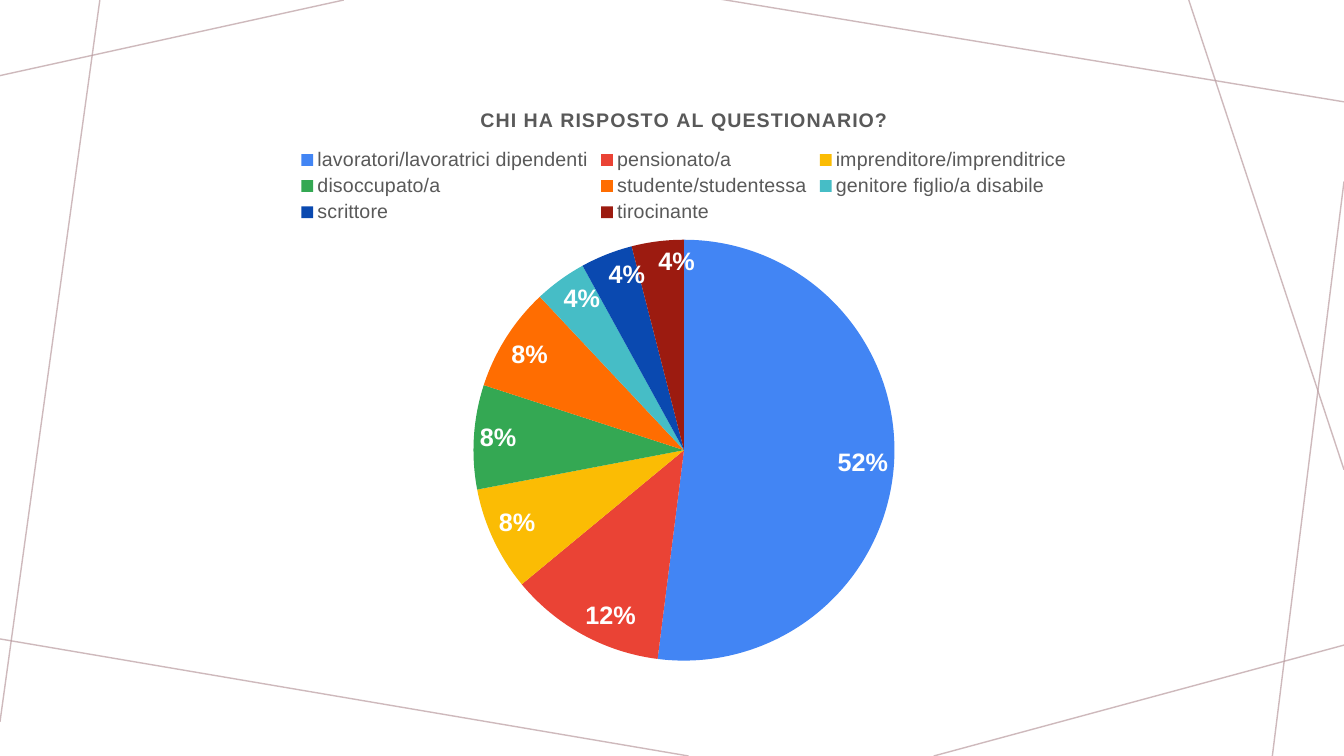
from lxml.etree import SubElement
from pptx import Presentation
from pptx.chart.data import CategoryChartData
from pptx.dml.color import RGBColor
from pptx.enum.chart import XL_CHART_TYPE, XL_LABEL_POSITION, XL_LEGEND_POSITION
from pptx.enum.shapes import MSO_CONNECTOR
from pptx.oxml.ns import qn
from pptx.util import Inches, Pt

WHITE = RGBColor(0xFF, 0xFF, 0xFF)
GREY = RGBColor(0x59, 0x59, 0x59)
MAUVE = RGBColor(0xBA, 0x9C, 0xA0)
BLUE = RGBColor(0x42, 0x85, 0xF4)
RED = RGBColor(0xEA, 0x43, 0x35)
YELLOW = RGBColor(0xFB, 0xBC, 0x04)
GREEN = RGBColor(0x34, 0xA8, 0x53)
ORANGE = RGBColor(0xFF, 0x6D, 0x01)
TEAL = RGBColor(0x46, 0xBD, 0xC6)
NAVY = RGBColor(0x0A, 0x49, 0xB0)
MAROON = RGBColor(0x9C, 0x1B, 0x10)

LINES = [
    (25.58, 0, 0, 10),
    (7.43, 0, 0, 95.47),
    (51.24, 100, -0.38, 84.4),
    (100, 85.33, 69.47, 100),
    (100, 24, 94.67, 100),
    (100, 62.13, 88.45, 0),
    (100, 13.47, 53.56, -0.13),
]

GROUPS = [
    ("lavoratori/lavoratrici dipendenti", 52, BLUE),
    ("pensionato/a", 12, RED),
    ("imprenditore/imprenditrice", 8, YELLOW),
    ("disoccupato/a", 8, GREEN),
    ("studente/studentessa", 8, ORANGE),
    ("genitore figlio/a disabile", 4, TEAL),
    ("scrittore", 4, NAVY),
    ("tirocinante", 4, MAROON),
]


def style(font, size=14, color=GREY, bold=False):
    font.name = "Arial"
    font.size = Pt(size)
    font.bold = bold
    font.color.rgb = color


def write(frame, text, gap=0, **look):
    run = frame.paragraphs[0].add_run()
    run.text = text
    style(run.font, **look)
    run.font._element.set("spc", str(gap))


class Deck:
    def __init__(self, wide, high):
        self.show = Presentation()
        self.show.slide_width = Inches(wide)
        self.show.slide_height = Inches(high)
        self.slide = self.show.slides.add_slide(self.show.slide_layouts[6])

    def place(self, x, y):
        return (int(self.show.slide_width * x / 100),
                int(self.show.slide_height * y / 100))

    def line(self, x1, y1, x2, y2):
        line = self.slide.shapes.add_connector(
            MSO_CONNECTOR.STRAIGHT, *self.place(x1, y1), *self.place(x2, y2))
        line.line.width = Pt(1)
        line.line.color.rgb = MAUVE
        props = line._element.spPr
        tone = next(props.iter(qn("a:srgbClr")))
        SubElement(tone, qn("a:alpha"), val="70000")
        SubElement(props, qn("a:effectLst"))

    def pie(self, title, groups, x, y, w, h, plot):
        names, values, colors = zip(*groups)
        data = CategoryChartData()
        data.categories = names
        data.add_series("Series 1", values)
        chart = self.slide.shapes.add_chart(
            XL_CHART_TYPE.PIE, *self.place(x, y), *self.place(w, h), data).chart
        style(chart.font, size=10)
        write(chart.chart_title.text_frame, title, gap=60, bold=True)
        chart.chart_title.include_in_layout = False
        chart.has_legend = True
        chart.legend.position = XL_LEGEND_POSITION.TOP
        chart.legend.include_in_layout = False
        style(chart.legend.font)
        pie = chart.plots[0]
        pie.vary_by_categories = True
        for spot, color in enumerate(colors):
            fill = pie.series[0].points[spot].format.fill
            fill.solid()
            fill.fore_color.rgb = color
        labels = pie.series[0].data_labels
        labels.show_percentage = True
        labels.show_value = False
        labels.position = XL_LABEL_POSITION.INSIDE_END
        style(labels.font, size=18, color=WHITE, bold=True)
        self.frame(chart, plot)

    def frame(self, chart, plot):
        area = next(chart._chartSpace.iter(qn("c:plotArea")))
        for old in area.findall(qn("c:layout")):
            area.remove(old)
        layout = SubElement(area, qn("c:layout"))
        area.insert(0, layout)
        manual = SubElement(layout, qn("c:manualLayout"))
        SubElement(manual, qn("c:layoutTarget"), val="inner")
        for mode in ("xMode", "yMode"):
            SubElement(manual, qn("c:" + mode), val="edge")
        for side, share in zip("xywh", plot):
            SubElement(manual, qn("c:" + side), val=str(share / 100))


def main():
    deck = Deck(13.33, 7.5)
    for ends in LINES:
        deck.line(*ends)
    deck.pie("CHI HA RISPOSTO AL QUESTIONARIO?", GROUPS,
             11.1, 11.47, 79.59, 77.87, plot=(30.3, 26, 39.4, 71.5))
    deck.show.save("out.pptx")


if __name__ == "__main__":
    main()
